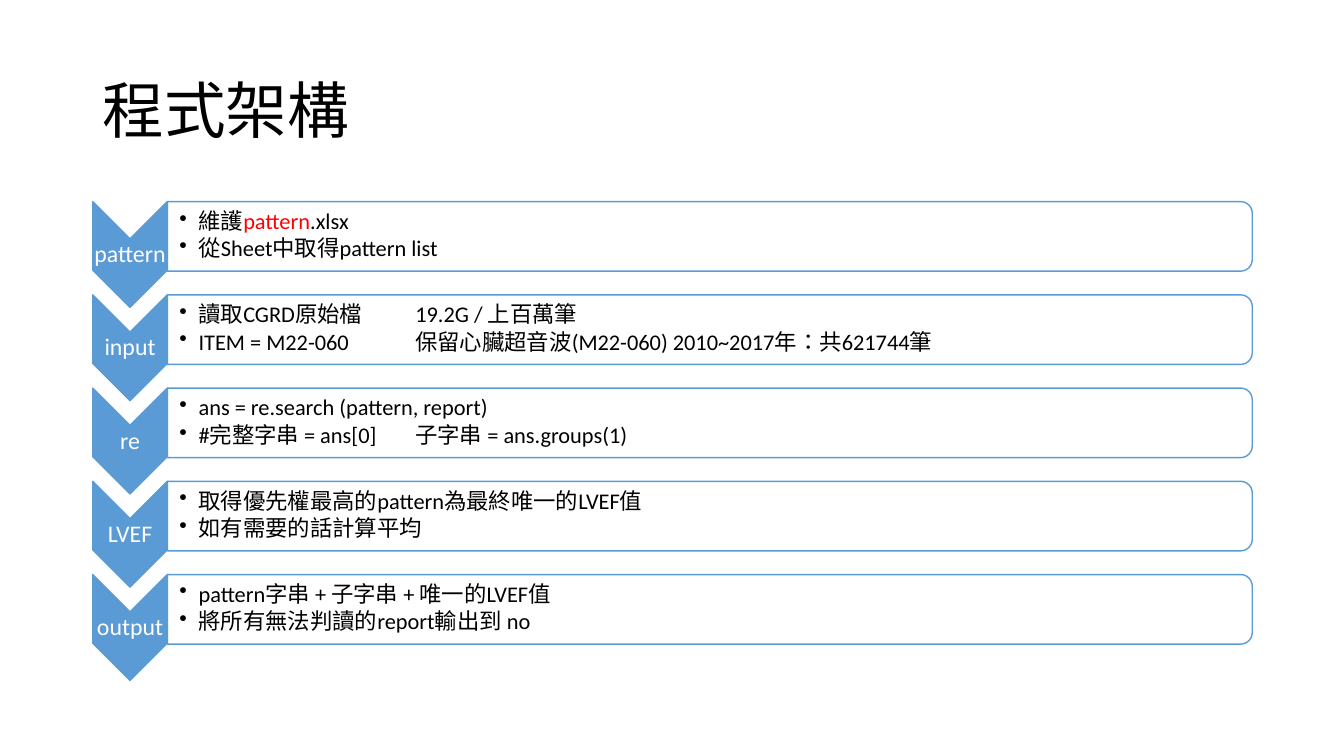
import pptx
import pptx.dml.color
import pptx.enum.shapes
import pptx.enum.text
import pptx.oxml
import pptx.oxml.ns
import pptx.util
from dataclasses import dataclass

PX = 9144  # EMU per px, 100 px to the inch
SHAPE = pptx.enum.shapes.MSO_SHAPE
ALIGN = pptx.enum.text.PP_ALIGN


@dataclass(frozen=True)
class Theme:
    font: str = "Calibri"
    title: int = 44
    label: int = 17
    body: int = 16
    blue: str = "5B9BD5"
    white: str = "FFFFFF"
    black: str = "000000"
    red: str = "FF0000"


THEME = Theme()

# Label and bullets of each step; a bullet is a list of (text, colour) runs
STEPS = [
    ("pattern", [
        [("維護", THEME.black), ("pattern", THEME.red), (".xlsx", THEME.black)],
        [("從Sheet中取得pattern list", THEME.black)],
    ]),
    ("input", [
        [("讀取CGRD原始檔\t19.2G / 上百萬筆", THEME.black)],
        [("ITEM = M22-060\t保留心臟超音波(M22-060) 2010~2017年：共621744筆", THEME.black)],
    ]),
    ("re", [
        [("ans = re.search (pattern, report)", THEME.black)],
        [("#完整字串 = ans[0]\t子字串 = ans.groups(1)", THEME.black)],
    ]),
    ("LVEF", [
        [("取得優先權最高的pattern為最終唯一的LVEF值", THEME.black)],
        [("如有需要的話計算平均", THEME.black)],
    ]),
    ("output", [
        [("pattern字串 + 子字串 + 唯一的LVEF值", THEME.black)],
        [("將所有無法判讀的report輸出到 no", THEME.black)],
    ]),
]


def px(n):
    return pptx.util.Emu(round(n * PX))


def rgb(color):
    return pptx.dml.color.RGBColor.from_string(color)


def add_text(s, box, paragraphs, size, insets, align=ALIGN.LEFT, after=0):
    """Middle-anchored text box; each paragraph is a list of (text, colour)."""
    tf = s.shapes.add_textbox(*map(px, box)).text_frame
    tf.word_wrap = True
    tf.vertical_anchor = pptx.enum.text.MSO_ANCHOR.MIDDLE
    tf.margin_left, tf.margin_top, tf.margin_right, tf.margin_bottom = map(px, insets)
    for i, runs in enumerate(paragraphs):
        p = tf.add_paragraph() if i else tf.paragraphs[0]
        p.alignment = align
        p.line_spacing = 0.9
        p.space_after = pptx.util.Pt(after)
        for text, color in runs:
            r = p.add_run()
            r.text = text
            r.font.name = THEME.font
            r.font.size = pptx.util.Pt(size)
            r.font.color.rgb = rgb(color)
            r._r.get_or_add_rPr().set("lang", "zh-TW")
    return tf


def add_turned(s, kind, box, fill):
    """Preset shape turned a quarter clockwise so that it fills the box."""
    x, y, w, h = box
    sp = s.shapes.add_shape(kind, px(x + (w - h) / 2), px(y + (h - w) / 2), px(h), px(w))
    sp.rotation = 90
    sp.shadow.inherit = False
    sp.fill.solid()
    sp.fill.fore_color.rgb = rgb(fill)
    sp.line.color.rgb = rgb(THEME.blue)
    sp.line.width = pptx.util.Pt(1)
    return sp


def add_bullet(p):
    pPr = p._p.get_or_add_pPr()
    pPr.set("marL", str(px(19)))
    pPr.set("indent", str(px(-19)))
    pPr.set("defTabSz", str(px(78)))
    ns = pptx.oxml.ns.nsdecls("a")
    pPr.append(pptx.oxml.parse_xml(f'<a:buChar {ns} char="•"/>'))


def add_title(s, box):
    add_text(s, box, [[("程式架構", THEME.black)]], THEME.title, (10, 5, 10, 5))


def add_step(s, box, label, bullets):
    x, y, w, h = box
    arrow_w = 74
    # Downward chevron with its label
    add_turned(s, SHAPE.CHEVRON, (x, y, arrow_w, h), THEME.blue)
    add_text(s, (x, y + 37, arrow_w, 32), [[(label, THEME.white)]],
             THEME.label, (1, 1, 1, 1), ALIGN.CENTER)
    # Panel rounded on the right
    panel_x, panel_w = x + arrow_w, w - arrow_w
    panel = add_turned(s, SHAPE.ROUND_2_SAME_RECTANGLE, (panel_x, y, panel_w, 69), THEME.white)
    color = panel._element.spPr.find(pptx.oxml.ns.qn("a:solidFill"))[0]
    ns = pptx.oxml.ns.nsdecls("a")
    color.append(pptx.oxml.parse_xml(f'<a:alpha {ns} val="90000"/>'))
    # Bullets
    tf = add_text(s, (panel_x, y + 3, panel_w - 3, 62), bullets,
                  THEME.body, (12, 1, 1, 1), after=2.4)
    for p in tf.paragraphs:
        add_bullet(p)


def add_steps(s, box):
    x, y, w, h = box
    step_h = 105
    pitch = (h - step_h) / (len(STEPS) - 1)
    for i, (label, bullets) in enumerate(STEPS):
        add_step(s, (x, y + i * pitch, w, step_h), label, bullets)


def main():
    prs = pptx.Presentation()
    prs.slide_width, prs.slide_height = px(1333), px(750)
    s = prs.slides.add_slide(prs.slide_layouts[6])
    add_title(s, (92, 40, 1150, 145))
    add_steps(s, (92, 200, 1150, 475))
    prs.save("out.pptx")


if __name__ == "__main__":
    main()
